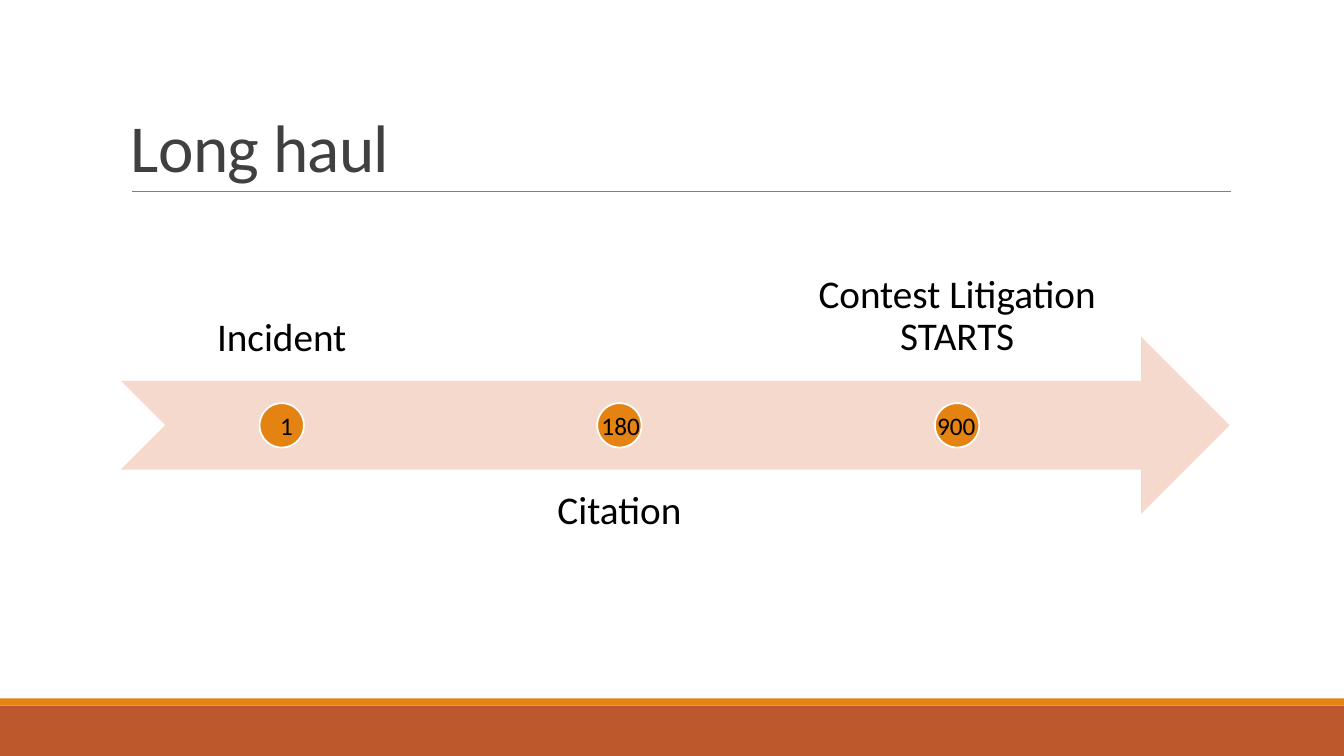
from dataclasses import dataclass
from pptx import Presentation
from pptx.dml.color import RGBColor
from pptx.enum.shapes import MSO_CONNECTOR, MSO_SHAPE
from pptx.enum.text import MSO_ANCHOR, PP_ALIGN
from pptx.oxml.ns import qn
from pptx.util import Pt
from lxml.etree import SubElement


@dataclass(frozen=True)
class Theme:
    """Colours, font and type sizes of the slide."""
    font: str = "Calibri"
    rust: str = "BD582C"
    gold: str = "E48312"
    blush: str = "F5D9CC"
    rule: str = "808080"
    white: str = "FFFFFF"
    head: str = "404040"
    ink: str = "000000"
    title: int = 48
    label: int = 28
    day: int = 18


class Board:
    """Draws styled elements on one slide."""

    def __init__(self, theme, slide):
        self.theme = theme
        self.slide = slide

    def shape(self, kind, box, fill, edge=None):
        item = self.slide.shapes.add_shape(kind, *map(Pt, box))
        item.shadow.inherit = False
        item.fill.solid()
        item.fill.fore_color.rgb = RGBColor.from_string(fill)
        if edge:
            item.line.color.rgb = RGBColor.from_string(edge)
            item.line.width = Pt(1.25)
        else:
            item.line.fill.background()

    def line(self, left, right, y):
        item = self.slide.shapes.add_connector(
            MSO_CONNECTOR.STRAIGHT, Pt(left), Pt(y), Pt(right), Pt(y))
        item.line.color.rgb = RGBColor.from_string(self.theme.rule)
        item.line.width = Pt(0.5)
        SubElement(item._element.spPr, qn("a:effectLst"))

    def text(self, words, box, size, color, anchor=MSO_ANCHOR.TOP,
             align=PP_ALIGN.LEFT, lead=1.0, inset=None, track=None):
        frame = self.slide.shapes.add_textbox(*map(Pt, box)).text_frame
        frame.word_wrap = True
        frame.vertical_anchor = anchor
        if inset is not None:
            frame.margin_left = frame.margin_right = Pt(inset)
            frame.margin_top = frame.margin_bottom = Pt(inset)
        frame.text = words
        para = frame.paragraphs[0]
        para.alignment = align
        para.line_spacing = lead
        run = para.runs[0]
        run.font.name = self.theme.font
        run.font.size = Pt(size)
        run.font.color.rgb = RGBColor.from_string(color)
        if track is not None:
            run._r.get_or_add_rPr().set("spc", str(round(track * 100)))


def main():
    deck = Presentation()
    deck.slide_width, deck.slide_height = Pt(960), Pt(540)
    theme = Theme()
    board = Board(theme, deck.slides.add_slide(deck.slide_layouts[6]))

    board.shape(MSO_SHAPE.RECTANGLE, (0, 504, 960, 36), theme.rust)
    board.shape(MSO_SHAPE.RECTANGLE, (0, 498.9, 960, 5.1), theme.gold)
    board.line(94.3, 879, 136.8)
    board.text("Long haul", (86.4, 22.6, 792, 114.2), theme.title, theme.head,
               MSO_ANCHOR.BOTTOM, lead=0.85, track=-0.5)
    board.shape(MSO_SHAPE.NOTCHED_RIGHT_ARROW, (86.4, 240.4, 792, 126.7),
                theme.blush)

    wide, step, dot = 229.7, 241.2, 31.7
    above, below = (145.4, MSO_ANCHOR.BOTTOM), (335.5, MSO_ANCHOR.TOP)
    events = [
        ("Incident", "1", above, 193, 38.2),
        ("Citation", "180", below, 422.6, 45.4),
        ("Contest Litigation STARTS", "900", above, 662.4, 45.4),
    ]
    for num, (name, day, (top, anchor), left, span) in enumerate(events):
        start = 86.4 + num * step
        board.text(name, (start, top, wide, 126.7), theme.label, theme.ink,
                   anchor, PP_ALIGN.CENTER, 0.9, 15.7)
        board.shape(MSO_SHAPE.OVAL,
                    (start + (wide - dot) / 2, 288, dot, dot),
                    theme.gold, theme.white)
        board.text(day, (left, 289.4, span, 29.1), theme.day, theme.ink)

    deck.save("out.pptx")


if __name__ == "__main__":
    main()
